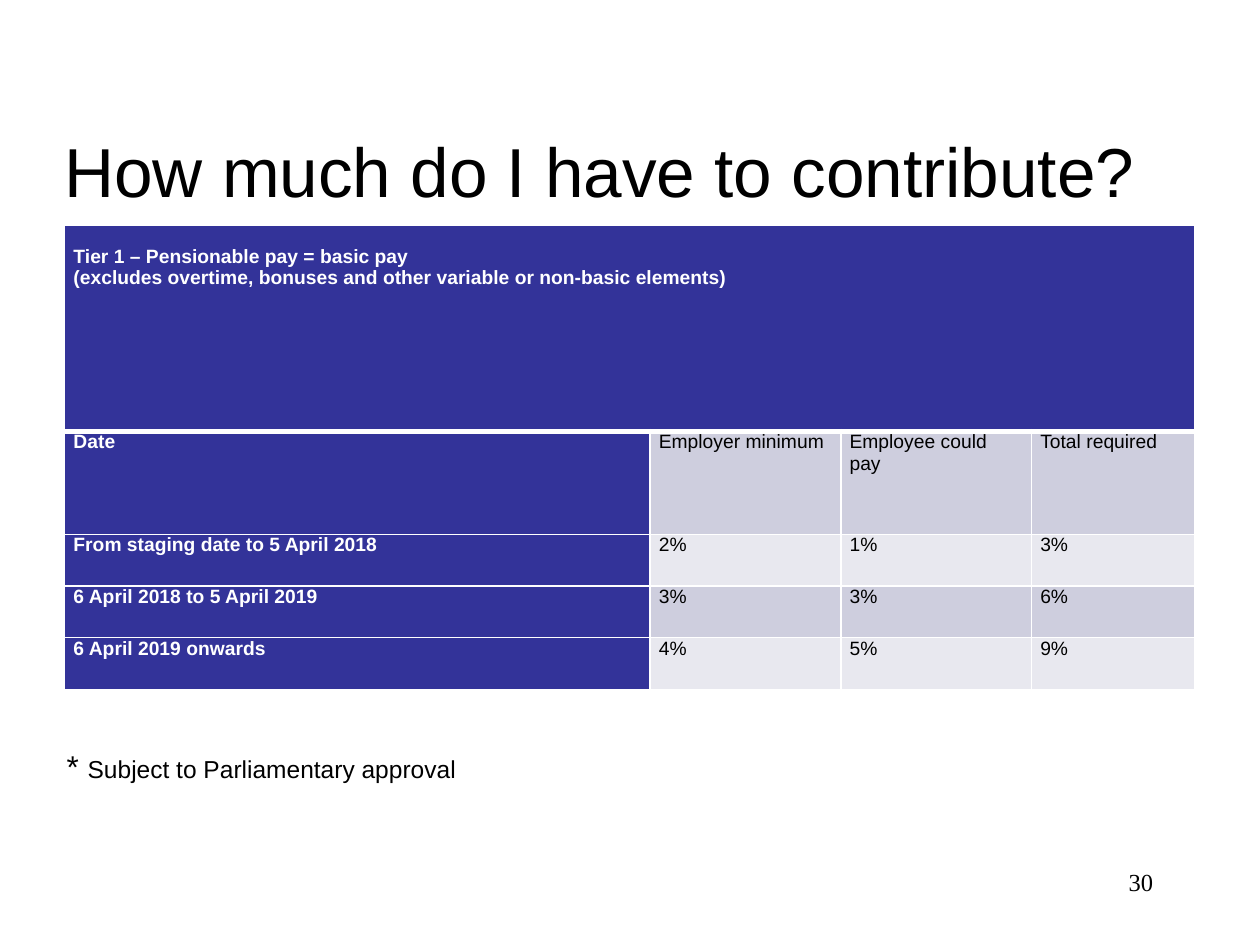
from pptx import Presentation
from pptx import util as u
from pptx.dml import color
from pptx.enum import text
from pptx.oxml import ns
from lxml import etree

Pt = u.Pt
COLORS = {"ink": "000000", "white": "FFFFFF", "navy": "333399",
          "band": "CECEDE", "pale": "E8E8EF"}
COLUMNS = [334.5, 109, 109, 93.5]
ROWS = [118, 59, 29.5, 29.5, 29.5]
HEADING = ["Tier 1 – Pensionable pay = basic pay",
           "(excludes overtime, bonuses and other variable or non-basic elements)"]
RATES = [
    ["Date", "Employer minimum", "Employee could pay", "Total required"],
    ["From staging date to 5 April 2018", "2%", "1%", "3%"],
    ["6 April 2018 to 5 April 2019", "3%", "3%", "6%"],
    ["6 April 2019 onwards", "4%", "5%", "9%"],
]


def rgb(name):
    return color.RGBColor.from_string(COLORS[name])


def add_run(p, words, size, name="ink", bold=False, face="Arial"):
    r = p.add_run()
    r.text = words
    r.font.size = Pt(size)
    r.font.name = face
    r.font.bold = bold
    r.font.color.rgb = rgb(name)


def set_borders(cell, bottom):
    tcPr = cell._tc.get_or_add_tcPr()
    for side, width in (("L", 1), ("R", 1), ("T", 1), ("B", bottom)):
        ln = etree.SubElement(tcPr, ns.qn("a:ln" + side), w=str(Pt(width)))
        fill = etree.SubElement(ln, ns.qn("a:solidFill"))
        etree.SubElement(fill, ns.qn("a:srgbClr"), val=COLORS["white"])


def format_cell(cell, fill, bottom=1):
    set_borders(cell, bottom)
    cell.fill.solid()
    cell.fill.fore_color.rgb = rgb(fill)
    cell.margin_left = cell.margin_right = Pt(5)
    cell.margin_top = cell.margin_bottom = 0


def place_title(s, x, y, w, h):
    title = s.shapes.title
    title.left, title.top, title.width, title.height = Pt(x), Pt(y), Pt(w), Pt(h)
    tf = title.text_frame
    tf.word_wrap = True
    tf.vertical_anchor = text.MSO_ANCHOR.MIDDLE
    tf.margin_top = Pt(8.6)
    p = tf.paragraphs[0]
    p.alignment = text.PP_ALIGN.LEFT
    add_run(p, "How much do I have to contribute?", 39.6)


def place_table(s, x, y):
    table = s.shapes.add_table(len(ROWS), len(COLUMNS), Pt(x), Pt(y),
                               Pt(sum(COLUMNS)), Pt(sum(ROWS))).table
    for column, width in zip(table.columns, COLUMNS):
        column.width = Pt(width)
    for row, height in zip(table.rows, ROWS):
        row.height = Pt(height)

    for cell in table.rows[0].cells:
        format_cell(cell, "navy", 3)
    heading = table.cell(0, 0)
    heading.merge(table.cell(0, len(COLUMNS) - 1))
    heading.margin_top = Pt(12)
    tf = heading.text_frame
    for i, line in enumerate(HEADING):
        p = tf.add_paragraph() if i else tf.paragraphs[0]
        add_run(p, line, 11, "white", True)

    for i, values in enumerate(RATES):
        for j, value in enumerate(values):
            first = j == 0
            cell = table.cell(i + 1, j)
            format_cell(cell, "navy" if first else ("band", "pale")[i % 2])
            add_run(cell.text_frame.paragraphs[0], value, 11,
                    "white" if first else "ink", first)


def add_text_box(s, x, y, w, h):
    tf = s.shapes.add_textbox(Pt(x), Pt(y), Pt(w), Pt(h)).text_frame
    tf.word_wrap = True
    return tf.paragraphs[0]


def place_footnote(s, x, y, w, h):
    p = add_text_box(s, x, y, w, h)
    add_run(p, "* ", 18)
    add_run(p, "Subject to Parliamentary approval", 14)


def place_page_number(s, x, y, w, h):
    p = add_text_box(s, x, y, w, h)
    p.alignment = text.PP_ALIGN.RIGHT
    add_run(p, "30", 14, face="Times New Roman")


def main():
    prs = Presentation()
    prs.slide_width, prs.slide_height = Pt(720), Pt(540)
    s = prs.slides.add_slide(prs.slide_layouts[5])
    place_title(s, 29.5, 49.7, 648, 90)
    place_table(s, 37, 128.5)
    place_footnote(s, 31, 423.4, 380, 29)
    place_page_number(s, 516, 492, 150, 36)
    prs.save("out.pptx")


if __name__ == "__main__":
    main()
